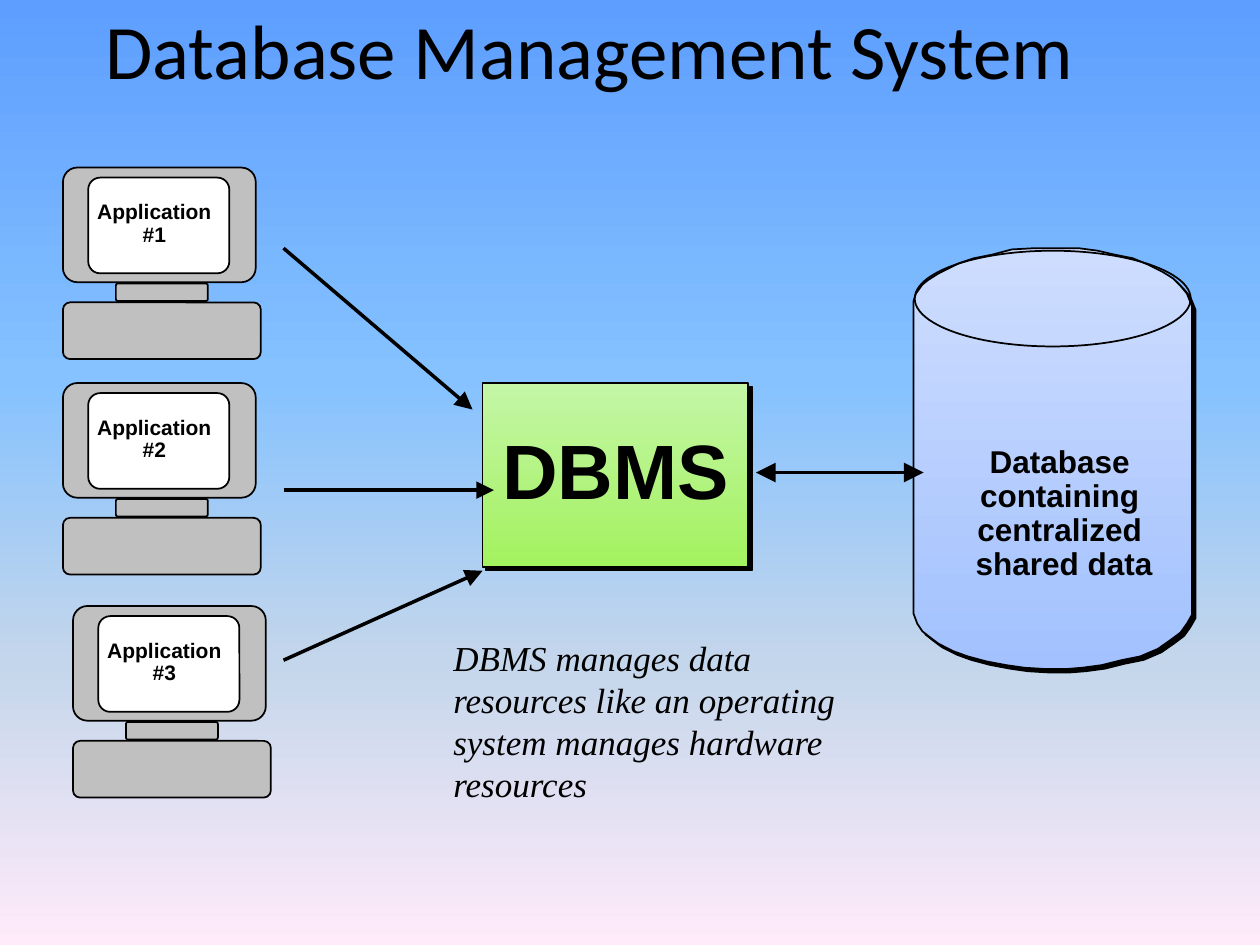
import pptx
import pptx.dml.color
import pptx.enum.shapes
import pptx.enum.text
import pptx.oxml
import pptx.oxml.ns
import pptx.util

Inches = pptx.util.Inches
Shape = pptx.enum.shapes.MSO_SHAPE
Align = pptx.enum.text.PP_ALIGN
NAMESPACE = pptx.oxml.ns.nsdecls("a")

THEME = {
    "ink": "000000", "case": "C0C0C0", "screen": "FFFFFF",
    "sky": [(0, "5E9EFF"), (40, "85C2FF"), (70, "C4D6EB"), (100, "FFEBFA")],
    "green": [(0, "C4F6A6"), (100, "A3F25F")],
    "blue": [(0, "CEDDFE"), (100, "A2C1FE")],
    "title": {"name": "Calibri", "size": 44},
    "note": {"name": "Times New Roman", "size": 20, "italic": True},
    "hub": {"name": "Arial", "size": 44, "bold": True},
    "store": {"name": "Arial", "size": 18, "bold": True},
    "screen_text": {"name": "Arial", "size": 12, "bold": True},
}

# Content
TITLE = ["Database Management System"]
NOTE = ["DBMS manages data resources like an operating system manages hardware resources"]
HUB = ["DBMS"]
STORE = ["Database", "containing", "centralized", " shared data"]
COMPUTERS = [("#1", 0.5, 1.33), ("#2", 0.5, 3.04), ("#3", 0.58, 4.81)]

# Computer parts, relative to the monitor's corner: left, top, width, height, fill
COMPUTER_PARTS = [
    (0, 1.07, 1.57, 0.45, "case"),
    (0, 0, 1.53, 0.91, "case"),
    (0.42, 0.92, 0.73, 0.14, "case"),
    (0.2, 0.08, 1.12, 0.76, "screen"),
]
# Arrows: start, end, width, head at both ends
ARROWS = [
    ((6, 3.75), (7.33, 3.75), 2.25, True),
    ((2.25, 1.97), (3.75, 3.25), 2, False),
    ((2.25, 3.89), (3.92, 3.89), 2, False),
    ((2.25, 5.24), (3.83, 4.53), 2, False),
]
# Cylinder outline in hundredths of an inch
CYLINDER = [
    (946, 243), (946, 488), (942, 495), (937, 502), (929, 508), (919, 515), (905, 521),
    (890, 524), (874, 528), (859, 530), (846, 531), (830, 531), (813, 530), (799, 528),
    (783, 525), (768, 521), (757, 517), (745, 511), (737, 505), (732, 501), (728, 495),
    (725, 487), (725, 239), (727, 233), (732, 226), (737, 222), (745, 217), (751, 214),
    (761, 209), (773, 205), (788, 202), (803, 198), (821, 197), (836, 197), (856, 197),
    (871, 199), (884, 202), (899, 205), (911, 210), (923, 216), (931, 221), (937, 227),
    (942, 233),
]


def color(value):
    return pptx.dml.color.RGBColor.from_string(value)


def paint_gradient(fill, element, stops):
    """Fill from top to bottom with any number of stops."""
    fill.gradient()
    fill.gradient_angle = 270
    stop_list = element.find(".//" + pptx.oxml.ns.qn("a:gsLst"))
    for stop in list(stop_list):
        stop_list.remove(stop)
    for percent, value in stops:
        stop_list.append(pptx.oxml.parse_xml(
            f'<a:gs {NAMESPACE} pos="{percent * 1000}"><a:srgbClr val="{value}"/></a:gs>'))


def style_shape(shape, fill=None, shadow=False):
    """Black outline; fill is a colour, a list of stops or None."""
    shape.shadow.inherit = False
    shape.line.color.rgb = color(THEME["ink"])
    shape.line.width = pptx.util.Pt(1)
    if fill is None:
        shape.fill.background()
    elif isinstance(fill, list):
        paint_gradient(shape.fill, shape.element, fill)
    else:
        shape.fill.solid()
        shape.fill.fore_color.rgb = color(fill)
    if shadow:
        effects = shape.element.find(".//" + pptx.oxml.ns.qn("a:effectLst"))
        effects.append(pptx.oxml.parse_xml(
            f'<a:outerShdw {NAMESPACE} dist="35560" dir="2700000" algn="ctr" rotWithShape="0">'
            f'<a:srgbClr val="{THEME["ink"]}"/></a:outerShdw>'))


def add_shape(page, kind, area, fill=None, shadow=False):
    shape = page.shapes.add_shape(kind, *map(Inches, area))
    style_shape(shape, fill, shadow)
    return shape


def write(box, lines, font, align=Align.CENTER, spacing=0.9, wrap=False, inset=(0.1, 0.05)):
    frame = box.text_frame
    frame.word_wrap = wrap
    frame.margin_left = frame.margin_right = Inches(inset[0])
    frame.margin_top = frame.margin_bottom = Inches(inset[1])
    for index, line in enumerate(lines):
        para = frame.add_paragraph() if index else frame.paragraphs[0]
        para.alignment = align
        para.line_spacing = spacing
        span = para.add_run()
        span.text = line
        for name, value in font.items():
            setattr(span.font, name, pptx.util.Pt(value) if name == "size" else value)
        span.font.color.rgb = color(THEME["ink"])


def add_text(page, area, lines, font, **layout):
    write(page.shapes.add_textbox(*map(Inches, area)), lines, font, **layout)


def add_arrow(page, start, end, width, both_ends):
    arrow = page.shapes.add_connector(
        pptx.enum.shapes.MSO_CONNECTOR.STRAIGHT, *map(Inches, start + end))
    arrow.line.color.rgb = color(THEME["ink"])
    arrow.line.width = pptx.util.Pt(width)
    line = arrow.element.spPr.find(pptx.oxml.ns.qn("a:ln"))
    for tag in ["headEnd", "tailEnd"] if both_ends else ["tailEnd"]:
        line.append(pptx.oxml.parse_xml(
            f'<a:{tag} {NAMESPACE} type="triangle" w="lg" len="lg"/>'))
    arrow.element.spPr.append(pptx.oxml.parse_xml(f"<a:effectLst {NAMESPACE}/>"))


def add_computer(page, number, left, top):
    for x, y, width, height, fill in COMPUTER_PARTS:
        part = add_shape(page, Shape.ROUNDED_RECTANGLE,
                         (left + x, top + y, width, height), THEME[fill])
        part.adjustments[0] = 0.125
    add_text(page, (left + 0.17, top + 0.22, 1.11, 0.46),
             ["Application", number], THEME["screen_text"])


def main():
    deck = pptx.Presentation()
    deck.slide_width, deck.slide_height = Inches(10), Inches(7.5)
    page = deck.slides.add_slide(deck.slide_layouts[6])
    paint_gradient(page.background.fill, page.element, THEME["sky"])

    # Title and note
    add_text(page, (0.35, 0, 8.66, 0.77), TITLE, THEME["title"],
             spacing=1.0, inset=(0.05, 0.02))
    add_text(page, (3.5, 5, 3.67, 1.43), NOTE, THEME["note"],
             align=Align.LEFT, spacing=1.0, wrap=True)

    # DBMS block
    hub = add_shape(page, Shape.RECTANGLE, (3.83, 3.04, 2.11, 1.46), THEME["green"], True)
    hub.text_frame.vertical_anchor = pptx.enum.text.MSO_ANCHOR.MIDDLE
    write(hub, HUB, THEME["hub"])

    # Database cylinder
    builder = page.shapes.build_freeform(*CYLINDER[0], scale=Inches(0.01))
    builder.add_line_segments(CYLINDER[1:], close=True)
    style_shape(builder.convert_to_shape(), THEME["blue"], True)
    add_shape(page, Shape.OVAL, (7.26, 1.99, 2.19, 0.76))
    add_text(page, (7.57, 3.49, 1.68, 1.18), STORE, THEME["store"])

    # Arrows and computers
    for arrow in ARROWS:
        add_arrow(page, *arrow)
    for computer in COMPUTERS:
        add_computer(page, *computer)

    deck.save("out.pptx")


if __name__ == "__main__":
    main()
